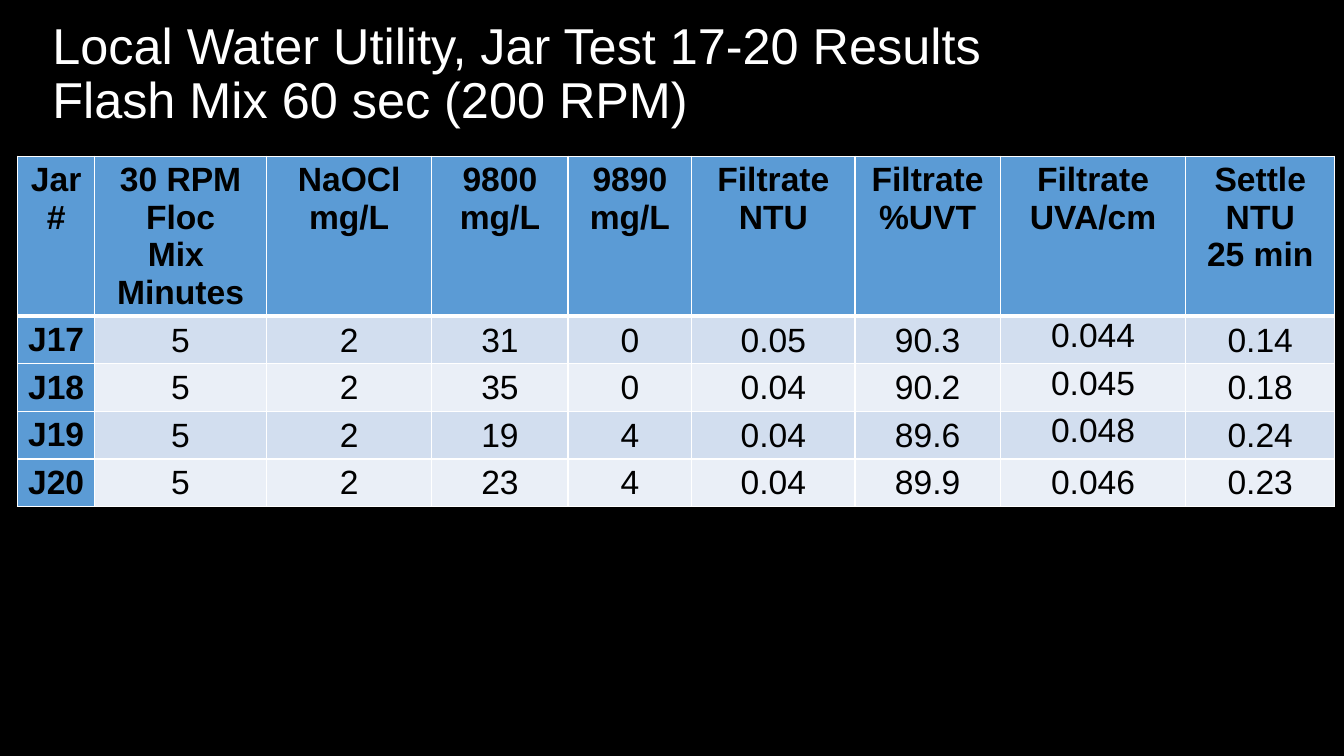
from lxml.etree import SubElement
from pptx import Presentation
from pptx.dml.color import RGBColor
from pptx.enum.text import MSO_ANCHOR, MSO_AUTO_SIZE, PP_ALIGN
from pptx.oxml.ns import qn
from pptx.util import Pt

BLACK = RGBColor(0x00, 0x00, 0x00)
WHITE = RGBColor(0xFF, 0xFF, 0xFF)
BLUE = RGBColor(0x5B, 0x9B, 0xD5)
BANDS = [RGBColor(0xD2, 0xDE, 0xEF), RGBColor(0xEA, 0xEF, 0xF7)]

TITLE = "Local Water Utility, Jar Test 17-20 Results\vFlash Mix 60 sec (200 RPM)"
HEADINGS = [
    "Jar\v#",
    "30 RPM\nFloc\nMix \nMinutes",
    "NaOCl\nmg/L",
    "9800\nmg/L",
    "9890\nmg/L",
    "Filtrate\nNTU",
    "Filtrate\n%UVT",
    "Filtrate\nUVA/cm",
    "Settle\nNTU\n25 min",
]
RESULTS = [
    ["J17", "5", "2", "31", "0", "0.05", "90.3", "0.044", "0.14"],
    ["J18", "5", "2", "35", "0", "0.04", "90.2", "0.045", "0.18"],
    ["J19", "5", "2", "19", "4", "0.04", "89.6", "0.048", "0.24"],
    ["J20", "5", "2", "23", "4", "0.04", "89.9", "0.046", "0.23"],
]
COLUMN_WIDTHS = [55.2, 122.6, 118.2, 97.3, 88.4, 116.6, 103.8, 132.5, 106.4]
HEADING_HEIGHT = 114
RESULT_HEIGHT = 34
UVA_COLUMN = 7


def format_paragraph(paragraph, size, color, alignment, bold=False):
    paragraph.alignment = alignment
    font = paragraph.font
    font.name = "Arial"
    font.size = Pt(size)
    font.bold = bold
    font.color.rgb = color


def add_title(page):
    title = page.shapes.title
    title.left, title.top, title.width, title.height = Pt(30.2), Pt(8), Pt(863.3), Pt(91.4)
    frame = title.text_frame
    frame.auto_size = MSO_AUTO_SIZE.NONE
    frame.word_wrap = True
    frame.vertical_anchor = MSO_ANCHOR.MIDDLE
    frame.text = TITLE
    paragraph = frame.paragraphs[0]
    paragraph.line_spacing = 0.9
    format_paragraph(paragraph, 36, WHITE, PP_ALIGN.LEFT)


def add_border(cell, side, width):
    properties = cell._tc.get_or_add_tcPr()
    line = SubElement(properties, qn(f"a:ln{side}"), w=str(Pt(width)))
    fill = SubElement(line, qn("a:solidFill"))
    SubElement(fill, qn("a:srgbClr"), val=str(WHITE))


def fill_cell(cell, text, color, bold, top_width=1, bottom_width=1):
    for side, width in zip("LRTB", (1, 1, top_width, bottom_width)):
        add_border(cell, side, width)
    cell.fill.solid()
    cell.fill.fore_color.rgb = color
    cell.text = text
    for paragraph in cell.text_frame.paragraphs:
        format_paragraph(paragraph, 24, BLACK, PP_ALIGN.CENTER, bold)


def set_result_layout(cell, anchor):
    cell.margin_left = cell.margin_right = cell.margin_top = Pt(0.75)
    cell.margin_bottom = Pt(0)
    cell.vertical_anchor = anchor


def add_results_table(page):
    height = HEADING_HEIGHT + RESULT_HEIGHT * len(RESULTS)
    frame = page.shapes.add_table(
        len(RESULTS) + 1, len(HEADINGS),
        Pt(12.5), Pt(111.6), Pt(sum(COLUMN_WIDTHS)), Pt(height),
    )
    table = frame.table
    table.first_col = True
    for column, width in zip(table.columns, COLUMN_WIDTHS):
        column.width = Pt(width)
    for row in table.rows:
        row.height = Pt(RESULT_HEIGHT)
    table.rows[0].height = Pt(HEADING_HEIGHT)

    for column, heading in enumerate(HEADINGS):
        fill_cell(table.cell(0, column), heading, BLUE, True, bottom_width=3)
    for row, values in enumerate(RESULTS, start=1):
        top_width = 3 if row == 1 else 1
        for column, value in enumerate(values):
            cell = table.cell(row, column)
            is_jar = column == 0
            color = BLUE if is_jar else BANDS[(row - 1) % 2]
            fill_cell(cell, value, color, is_jar, top_width)
            if not is_jar:
                at_top = column == UVA_COLUMN and row < len(RESULTS)
                set_result_layout(cell, MSO_ANCHOR.TOP if at_top else MSO_ANCHOR.MIDDLE)


def main():
    deck = Presentation()
    deck.slide_width, deck.slide_height = Pt(960), Pt(540)
    page = deck.slides.add_slide(deck.slide_layouts[5])
    page.background.fill.solid()
    page.background.fill.fore_color.rgb = BLACK
    add_title(page)
    add_results_table(page)
    deck.save("out.pptx")


if __name__ == "__main__":
    main()
